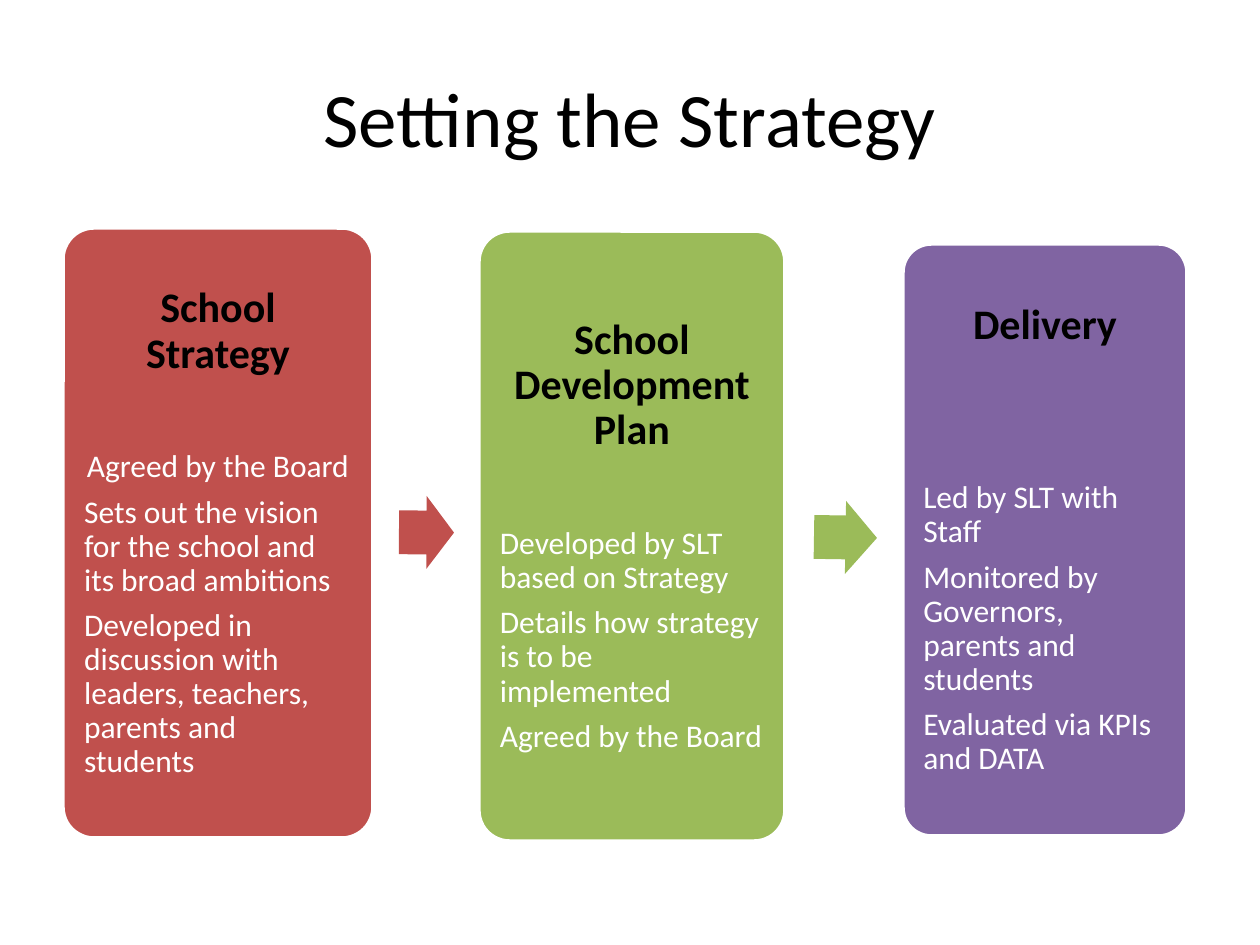
import pptx
import pptx.util
import pptx.dml.color
import pptx.enum.shapes
import pptx.enum.text

Pt = pptx.util.Pt
RGB = pptx.dml.color.RGBColor
SHAPE = pptx.enum.shapes.MSO_SHAPE
ALIGN = pptx.enum.text.PP_ALIGN
ANCHOR = pptx.enum.text.MSO_ANCHOR

RED = RGB(0xC0, 0x50, 0x4D)
GREEN = RGB(0x9B, 0xBB, 0x59)
PURPLE = RGB(0x80, 0x64, 0xA2)
BLACK = RGB(0, 0, 0)
WHITE = RGB(0xFF, 0xFF, 0xFF)
FONT = "Calibri"
PX = 914400 // 126
INSET = 12

# Box, colour, heading, gap below the heading in points, (text, alignment) lines
CARDS = [
    ((63, 228, 310, 610), RED, "School Strategy", 42, [
        ("Agreed by the Board", ALIGN.CENTER),
        ("Sets out the vision for the school and its broad ambitions", ALIGN.LEFT),
        ("Developed in discussion with leaders, teachers, parents and students",
         ALIGN.LEFT)]),
    ((479, 231, 306, 610), GREEN, "School Development Plan", 42, [
        ("Developed by SLT based on Strategy", ALIGN.LEFT),
        ("Details how strategy is to be implemented", ALIGN.LEFT),
        ("Agreed by the Board", ALIGN.LEFT)]),
    ((903, 244, 284, 592), PURPLE, "Delivery", 76, [
        ("Led by SLT with Staff", ALIGN.LEFT),
        ("Monitored by Governors, parents and students", ALIGN.LEFT),
        ("Evaluated via KPIs and DATA", ALIGN.LEFT)]),
]
# Box, colour, turn in degrees
ARROWS = [
    ((399, 496, 55, 73), RED, 0.3),
    ((814, 501, 63, 73), GREEN, 0.9),
]


def emu(box):
    return [n * PX for n in box]


def write(para, text, size, color, align, bold=False):
    para.alignment = align
    run = para.add_run()
    run.text = text
    font = run.font
    font.name, font.size, font.bold = FONT, Pt(size), bold
    font.color.rgb = color


def add_title(slide, box, text):
    title = slide.shapes.title
    title.left, title.top, title.width, title.height = emu(box)
    frame = title.text_frame
    frame.vertical_anchor = ANCHOR.MIDDLE
    write(frame.paragraphs[0], text, 44, BLACK, ALIGN.CENTER)


def add_solid(slide, kind, box, color):
    """Add a flat preset shape without shadow."""
    shape = slide.shapes.add_shape(kind, *emu(box))
    shape.shadow.inherit = False
    shape.fill.solid()
    shape.fill.fore_color.rgb = color
    return shape


def add_card(slide, box, color, head, gap, lines):
    card = add_solid(slide, SHAPE.ROUNDED_RECTANGLE, box, color)
    card.adjustments[0] = 0.1
    card.line.color.rgb = WHITE
    card.line.width = Pt(2)

    frame = card.text_frame
    frame.word_wrap = True
    frame.vertical_anchor = ANCHOR.MIDDLE
    frame.margin_left = frame.margin_right = INSET * PX
    frame.margin_top = frame.margin_bottom = INSET * PX

    para = frame.paragraphs[0]
    write(para, head, 24, BLACK, ALIGN.CENTER, bold=True)
    para.line_spacing, para.space_after = 0.9, Pt(gap)
    for text, align in lines:
        para = frame.add_paragraph()
        write(para, text, 18, WHITE, align)
        para.line_spacing, para.space_after = 0.9, Pt(6.5)


def add_arrow(slide, box, color, turn):
    arrow = add_solid(slide, SHAPE.RIGHT_ARROW, box, color)
    arrow.adjustments[0] = 0.6
    arrow.adjustments[1] = 0.5
    arrow.line.fill.background()
    arrow.rotation = turn


def main():
    deck = pptx.Presentation()
    deck.slide_width = 1260 * PX
    deck.slide_height = 945 * PX
    slide = deck.slides.add_slide(deck.slide_layouts.get_by_name("Title Only"))
    add_title(slide, (63, 38, 1134, 157), "Setting the Strategy")
    for card in CARDS:
        add_card(slide, *card)
    for arrow in ARROWS:
        add_arrow(slide, *arrow)
    deck.save("out.pptx")


if __name__ == "__main__":
    main()
